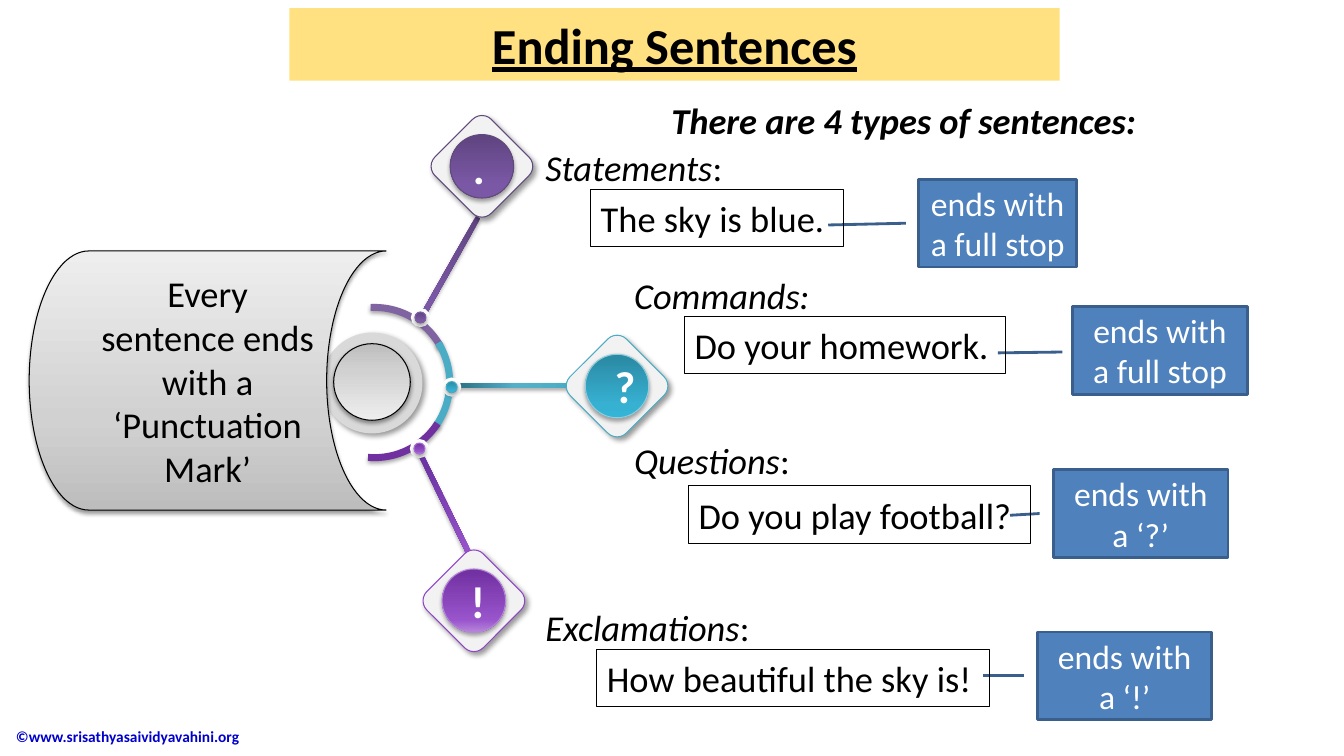
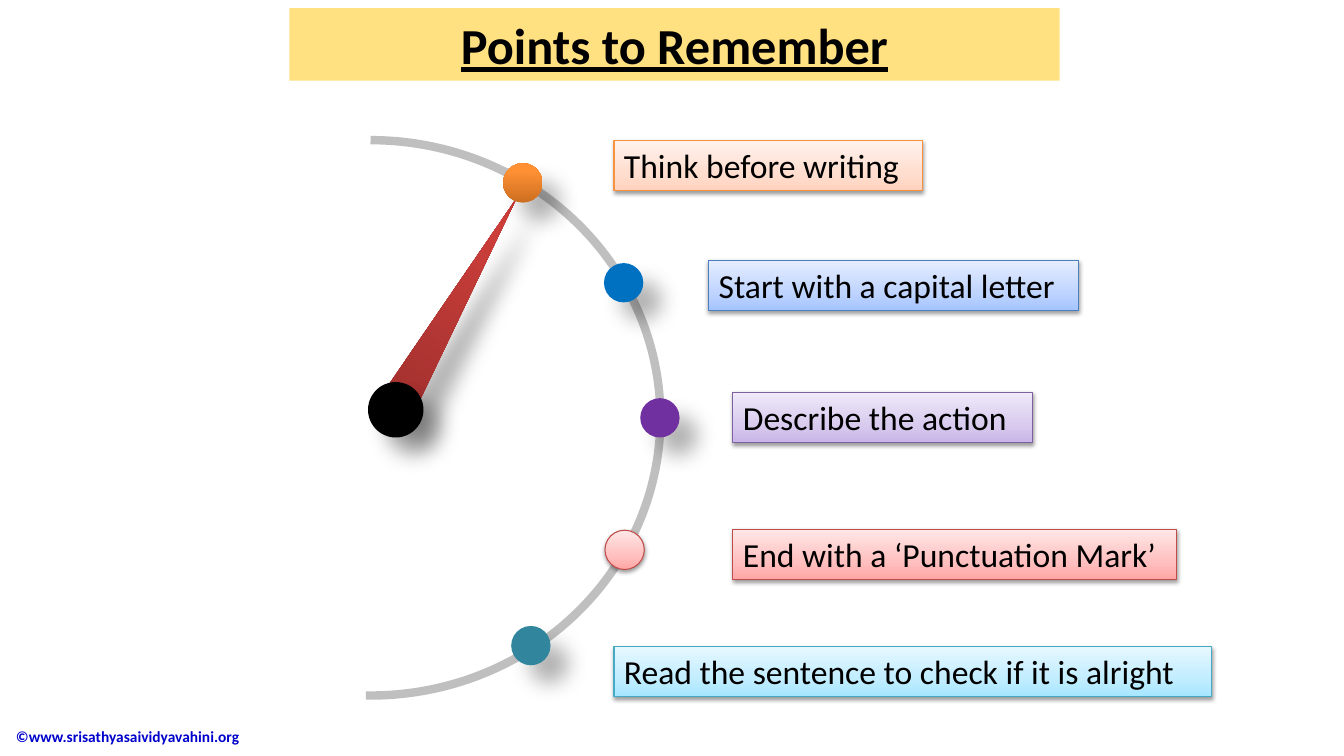
from lxml import etree
from pptx import Presentation
from pptx import util as u
from pptx.dml.color import RGBColor
from pptx.enum import shapes, text
from pptx.oxml.ns import qn

PX = 9144  # 100 px to the inch
FONT = "Calibri"
BLACK, WHITE = "000000", "FFFFFF"
KIND = shapes.MSO_SHAPE
LEFT, CENTER = text.PP_ALIGN.LEFT, text.PP_ALIGN.CENTER
TOP, MIDDLE = text.MSO_ANCHOR.TOP, text.MSO_ANCHOR.MIDDLE

# Gradient angles, counter-clockwise
RIGHT, UP, DOWN = 0, 90, 270

# Shadows: opacity %, blur pt, distance pt, direction
SOFT = (35, 3.1, 1.8, 90)
SUBTLE = (38, 3.1, 1.6, 90)
RAISED = (40, 4, 3, 45)
DEEP = (30, 15, 18, 45)

TITLE_BAND = (287, 8, 764, 72)
FOOTER = "©www.srisathyasaividyavahini.org"

GREY = [(0, "BDBDBD"), (35, "D1D1D1"), (100, "EEEEEE")]
PINK = [(0, "FFA6A5"), (35, "FFC0BF"), (100, "FFE7E7")]
VIOLET = [(0, "5F4480"), (80, "7B58A6"), (100, "7C57A8")]
TEAL = [(0, "2A88A2"), (80, "37B1D2"), (100, "34B4D6")]
PURPLE = [(0, "7030A0"), (80, "9954CC"), (100, "B686DA")]

RING = (297, 305, 149, 149)
BRANCHES = [
    dict(mark=".", mark_x=475, badge=(478, 165), rim="604A7B", tones=VIOLET,
         disc_line="604A7B", node=(417, 315), node_line="7D60A0",
         arc=(267, 331), arc_line="8064A2", stem=(387, 264, 117, 5), turn=119.4,
         stem_tones=VIOLET),
    dict(mark="?", mark_x=620, badge=(612, 383), rim="4BACC6", tones=TEAL,
         disc_line="93CDDD", node=(448, 384), node_line="46AAC5",
         arc=(328, 35), arc_line="4BACC6", stem=(448, 380, 117, 5), turn=0,
         stem_tones=[(0, "276A7C"), (54, "54B0C9"), (100, "4BACC6")]),
    dict(mark="!", mark_x=474, badge=(470, 596), rim="8F45C7", tones=PURPLE,
         disc_line="B686DA", node=(416, 445), node_line="A86ED4",
         arc=(33, 95), arc_line="7030A0", stem=(379, 492, 119, 5), turn=64,
         stem_tones=[(0, "7030A0"), (20, "6D35A4"), (100, "9954CC")]),
]

HEADING = ("There are 4 types of sentences:", (656, 92, 483, 63))
# Name in italics, upright rest, its box; example, its box; ending, its box, leader
SENTENCES = [
    ("Statements", ":", (531, 139, 215, 63),
     "The sky is blue.", (586, 188, 251, 57),
     "ends with a full stop", (911, 178, 157, 87), (0.5, -0.08, 0.52, -0.57)),
    ("Commands:", "", (619, 266, 213, 63),
     "Do your homework.", (679, 314, 318, 57),
     "ends with a full stop", (1064, 304, 173, 87), (0.52, -0.06, 0.53, -0.43)),
    ("Questions", ":", (619, 430, 186, 63),
     "Do you play football?", (683, 482, 339, 57),
     "ends with a ‘?’", (1045, 466, 173, 87), (0.5, -0.08, 0.52, -0.25)),
    ("Exclamations", ":", (531, 595, 225, 63),
     "How beautiful the sky is!", (592, 644, 389, 57),
     "ends with a ‘!’", (1029, 627, 173, 87), (0.5, -0.08, 0.5, -0.31)),
]

# Text, box, box tones, box line; dot corner, dot fill, dot line, dot shadow
POINTS = [
    ("Think before writing", (609, 139, 306, 50),
     [(0, "FFD2BD"), (35, "FFDED0"), (100, "FFF2ED")], "F69240",
     (499, 162), ([(0, "CC6E20"), (80, "FF9034"), (100, "FF9136")], UP), None, DEEP),
    ("Start with a capital letter", (703, 258, 367, 50),
     [(0, "A4C4FF"), (35, "BFD4FF"), (100, "E6EEFF")], "4B7EBC",
     (599, 261), "0070C0", None, DEEP),
    ("Describe the action", (727, 389, 297, 50),
     [(0, "C9B5E8"), (35, "D8CBEE"), (100, "F0EAF9")], "7D60A0",
     (635, 395), "7030A0", None, DEEP),
    ("End with a ‘Punctuation Mark’", (727, 525, 440, 50), PINK, "BF4C48",
     (600, 526), (PINK, UP), "BF4C48", SUBTLE),
    ("Read the sentence to check if it is alright", (609, 641, 593, 50),
     [(0, "A7E6FF"), (35, "C1EDFF"), (100, "E7F8FF")], "46AAC5",
     (507, 621), "31859C", None, DEEP),
]


def rgb(value):
    return RGBColor.from_string(value)


def emu(box):
    return [length * PX for length in box]


def around(center, size):
    """Square box of the given size about a centre."""
    return (center[0] - size / 2, center[1] - size / 2, size, size)


def set_fill(fill, paint, element):
    """Paint is None, a hex colour, or (stops, angle)."""
    if paint is None:
        fill.background()
    elif isinstance(paint, str):
        fill.solid()
        fill.fore_color.rgb = rgb(paint)
    else:
        stops, angle = paint
        fill.gradient()
        fill.gradient_angle = angle
        stop_list = element.find(".//" + qn("a:gsLst"))
        for stop in list(stop_list):
            stop_list.remove(stop)
        for place, colour in stops:
            stop = etree.SubElement(stop_list, qn("a:gs"), pos=str(place * 1000))
            etree.SubElement(stop, qn("a:srgbClr"), val=colour)


def set_shadow(shape, shadow):
    shape.shadow.inherit = False
    if shadow:
        opacity, blur, distance, direction = shadow
        effects = shape.element.spPr.find(qn("a:effectLst"))
        outer = etree.SubElement(
            effects, qn("a:outerShdw"), blurRad=str(int(u.Pt(blur))),
            dist=str(int(u.Pt(distance))), dir=str(direction * 60000), rotWithShape="0")
        colour = etree.SubElement(outer, qn("a:srgbClr"), val=BLACK)
        etree.SubElement(colour, qn("a:alpha"), val=str(opacity * 1000))


def add_shape(slide, kind, box, fill=None, line=None, width=0.75, shadow=None, turn=0,
              adjust=()):
    shape = slide.shapes.add_shape(kind, *(int(side) for side in emu(box)))
    shape.rotation = turn
    for index, value in enumerate(adjust):
        shape.adjustments[index] = value
    set_fill(shape.fill, fill, shape.element.spPr)
    set_fill(shape.line.fill, line, shape.element.spPr)
    if line:
        shape.line.width = u.Pt(width)
    set_shadow(shape, shadow)
    return shape


def write(shape, words, size, colour=BLACK, align=LEFT, anchor=TOP,
          bold=False, italic=False, underline=False):
    frame = shape.text_frame
    frame.word_wrap = True
    frame.auto_size = text.MSO_AUTO_SIZE.NONE
    frame.vertical_anchor = anchor
    para = frame.paragraphs[0]
    para.text = words
    para.alignment = align
    font = para.font
    font.name, font.size, font.color.rgb = FONT, u.Pt(size), rgb(colour)
    font.bold, font.italic, font.underline = bold, italic, underline
    return para


def add_text(slide, box, words, size, **style):
    label = slide.shapes.add_textbox(*(int(side) for side in emu(box)))
    return label, write(label, words, size, **style)


def start_slide(deck, title):
    slide = deck.slides.add_slide(deck.slide_layouts[5])
    band = slide.shapes.title
    band.left, band.top, band.width, band.height = emu(TITLE_BAND)
    set_fill(band.fill, "FFE181", band.element.spPr)
    write(band, title, 36, align=CENTER, anchor=MIDDLE, bold=True, underline=True)
    return slide


def move_footer_to_layout(slide):
    """Set the footer once, on the layout that all slides use."""
    footer, _ = add_text(slide, (6, 710, 353, 41), FOOTER, 11, colour="0000CC",
                         anchor=MIDDLE, bold=True)
    footer.element.nvSpPr.cNvPr.set("id", "99")
    slide.slide_layout.shapes.element.append(footer.element)


def draw_branch(slide, branch):
    add_shape(slide, KIND.RECTANGLE, branch["stem"], (branch["stem_tones"], RIGHT),
              shadow=SOFT, turn=branch["turn"])
    add_shape(slide, KIND.ARC, RING, line=branch["arc_line"], width=5, shadow=SOFT,
              adjust=[angle * 0.6 for angle in branch["arc"]])
    tones = (branch["tones"], DOWN)
    add_shape(slide, KIND.OVAL, around(branch["node"], 19), WHITE)
    add_shape(slide, KIND.OVAL, around(branch["node"], 11), tones,
              branch["node_line"], shadow=SOFT)
    add_shape(slide, KIND.ROUNDED_RECTANGLE, around(branch["badge"], 79), "F2F2F2",
              branch["rim"], shadow=RAISED, turn=45)
    add_shape(slide, KIND.OVAL, around(branch["badge"], 63), tones,
              branch["disc_line"], shadow=SOFT)
    mark, _ = add_text(slide, around((branch["mark_x"], branch["badge"][1]), 64),
                       branch["mark"], 32, colour=WHITE, align=CENTER, anchor=MIDDLE,
                       bold=True)


def draw_endings(deck):
    slide = start_slide(deck, "Ending Sentences")
    move_footer_to_layout(slide)
    for branch in BRANCHES:
        draw_branch(slide, branch)
    add_shape(slide, KIND.OVAL, (319, 330, 100, 100), "D9D9D9", shadow=RAISED)
    drum = add_shape(slide, KIND.FLOWCHART_STORED_DATA, (29, 249, 354, 257),
                     (GREY, UP), BLACK, shadow=SUBTLE)
    write(drum, "Every sentence ends with a ‘Punctuation Mark’", 26,
          align=CENTER, anchor=MIDDLE)
    add_shape(slide, KIND.OVAL, (331, 341, 76, 76), (GREY, DOWN), BLACK, shadow=SUBTLE)

    for name, rest, name_box, example, example_box, ending, ending_box, leader in SENTENCES:
        _, para = add_text(slide, name_box, name, 26, italic=True)
        if rest:
            span = para.add_run()
            span.text = rest
            span.font.italic = False
        callout = add_shape(slide, KIND.LINE_CALLOUT_1, ending_box, "4F81BD", "3A5F8C",
                            width=2, adjust=leader)
        write(callout, ending, 24, colour=WHITE, align=CENTER, anchor=MIDDLE)
        frame = add_shape(slide, KIND.RECTANGLE, example_box, line=BLACK)
        write(frame, example, 26, anchor=MIDDLE)
    words, box = HEADING
    add_text(slide, box, words, 26, bold=True, italic=True)


def draw_points(deck):
    slide = start_slide(deck, "Points to Remember")
    needle = [(0, "9C2F2D"), (80, "CB3E3A"), (100, "CE3B37")]
    add_shape(slide, KIND.ISOSCELES_TRIANGLE, (430, 180, 39, 251), (needle, UP),
              shadow=DEEP, turn=30)
    add_shape(slide, KIND.OVAL, (365, 379, 55, 55), BLACK, shadow=DEEP)
    add_shape(slide, KIND.ARC, (80, 139, 575, 551), line="BFBFBF", width=6,
              adjust=(162, 54.57))
    for words, box, tones, line, corner, dot_fill, dot_line, dot_shadow in POINTS:
        add_shape(slide, KIND.OVAL, (*corner, 39, 39), dot_fill, dot_line,
                  shadow=dot_shadow)
        label = add_shape(slide, KIND.RECTANGLE, box, (tones, UP), line, shadow=SUBTLE)
        write(label, words, 24)


def main():
    deck = Presentation()
    deck.slide_width, deck.slide_height = emu((1333, 750))
    draw_endings(deck)
    draw_points(deck)
    deck.save("out.pptx")


if __name__ == "__main__":
    main()
